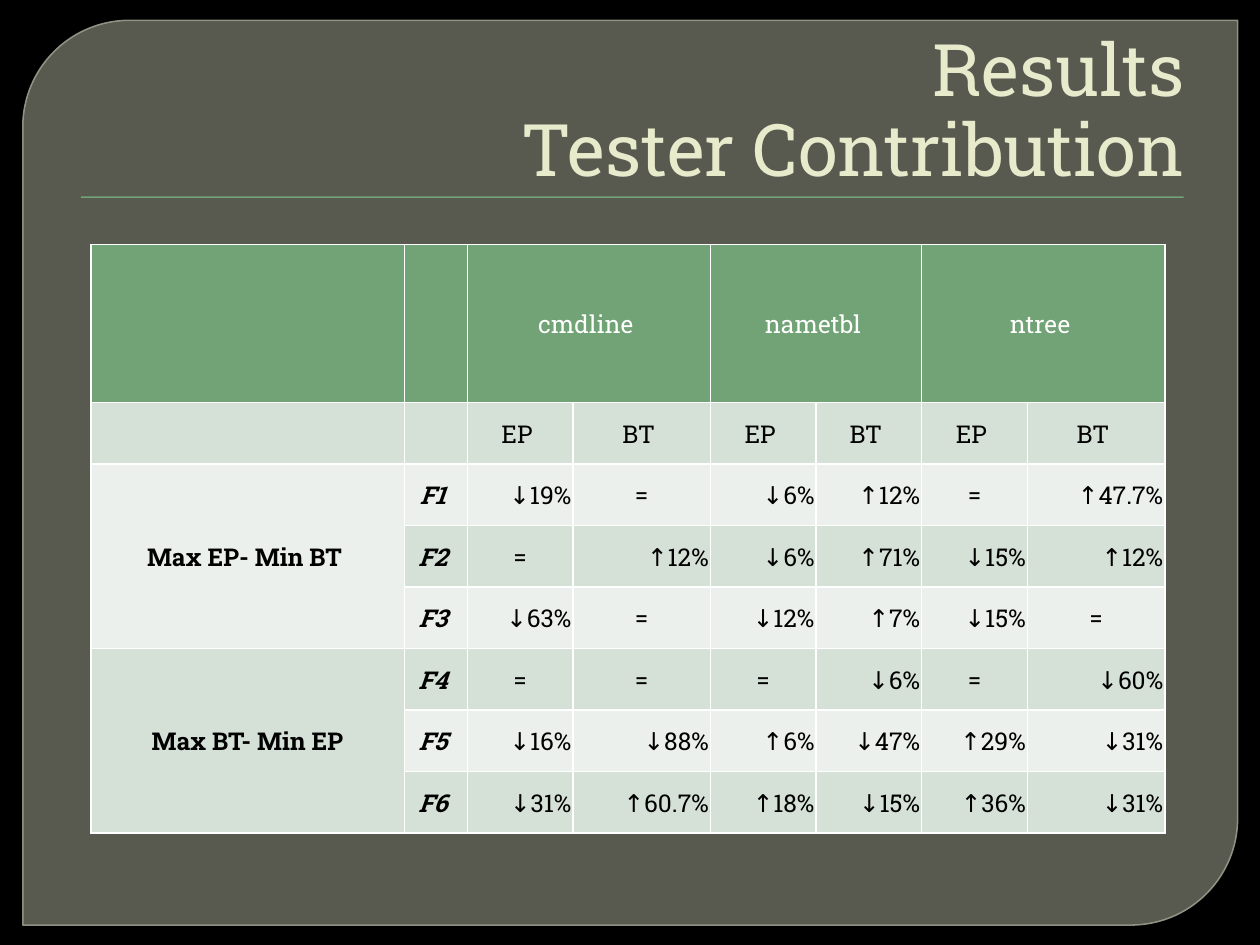
from lxml import etree
from pptx import Presentation
from pptx import util as u
from pptx.dml.color import RGBColor
from pptx.enum import shapes, text
from pptx.oxml import ns

COLORS = {
    "background": "000000", "panel": "888B7B", "panel_line": "9DA090",
    "accent": "72A376", "title": "E7EACB", "white": "FFFFFF",
    "black": "000000", "band_dark": "D5E0D6", "band_light": "EBF0EC",
}
FONT = "Roboto Slab"


def paint(fill, name, opacity=100):
    fill.solid()
    fill.fore_color.rgb = RGBColor.from_string(COLORS[name])
    if opacity < 100:
        for color in fill._xPr.iter(ns.qn("a:srgbClr")):
            etree.SubElement(color, ns.qn("a:alpha"), val=str(opacity * 1000))


def add_run(paragraph, words, size, color, bold=False, italic=False):
    run = paragraph.add_run()
    run.text = words
    run.font.name, run.font.size = FONT, u.Pt(size)
    run.font.bold, run.font.italic = bold, italic
    run.font.color.rgb = RGBColor.from_string(COLORS[color])


presentation = Presentation()
presentation.slide_width, presentation.slide_height = u.Cm(25.4), u.Cm(19.05)
slide = presentation.slides.add_slide(presentation.slide_layouts[5])
paint(slide.background.fill, "background")

# Panel and rule under the title
panel = slide.shapes.add_shape(shapes.MSO_SHAPE.ROUND_2_DIAG_RECTANGLE,
                               u.Cm(0.46), u.Cm(0.41), u.Cm(24.49), u.Cm(18.24))
panel.adjustments[0], panel.adjustments[1] = 0.118, 0
panel.shadow.inherit = False
paint(panel.fill, "panel", 65)
paint(panel.line.fill, "panel_line", 88)
panel.line.width = u.Pt(0.87)

rule = slide.shapes.add_shape(shapes.MSO_SHAPE.RECTANGLE,
                              u.Cm(1.63), u.Cm(3.96), u.Cm(22.23), u.Cm(0.03))
rule.shadow.inherit = False
paint(rule.fill, "accent")
rule.line.fill.background()

# Title, brought in front of the panel
title = slide.shapes.title
slide.shapes.element.append(title.element)
title.left, title.top = u.Cm(1.27), u.Cm(0.71)
title.width, title.height = u.Cm(22.86), u.Cm(3.18)
frame = title.text_frame
frame.auto_size = text.MSO_AUTO_SIZE.NONE
frame.word_wrap = True
frame.vertical_anchor = text.MSO_ANCHOR.BOTTOM
frame.margin_bottom = 0
paragraph = frame.paragraphs[0]
paragraph.alignment = text.PP_ALIGN.RIGHT
paragraph.line_spacing = 0.92
add_run(paragraph, "Results", 41.4, "title")
paragraph.add_line_break()
add_run(paragraph, "Tester Contribution", 41.4, "title")

# Table contents
rows = [
    ["", "", "cmdline ", "", "nametbl ", "", "ntree ", ""],
    ["", ""] + ["EP ", "BT "] * 3,
    ["Max EP- Min BT ", "F1 ", "↓19%", "=", "↓6%", "↑12%", "=", "↑47.7%"],
    ["", "F2 ", "=", "↑12%", "↓6%", "↑71%", "↓15%", "↑12%"],
    ["", "F3 ", "↓63%", "=", "↓12%", "↑7%", "↓15%", "="],
    ["Max BT- Min EP", "F4 ", "=", "=", "=", "↓6%", "=", "↓60%"],
    ["", "F5 ", "↓16%", "↓88%", "↑6%", "↓47%", "↑29%", "↓31%"],
    ["", "F6 ", "↓31%", "↑60.7%", "↑18%", "↓15%", "↑36%", "↓31%"],
]
widths = [6.32, 1.27, 2.13, 2.77, 2.13, 2.13, 2.13, 2.77]
heights = [3.18] + [1.24] * 7
table = slide.shapes.add_table(len(rows), len(widths), u.Cm(1.83), u.Cm(4.93),
                               u.Cm(sum(widths)), u.Cm(sum(heights))).table
for column, width in zip(table.columns, widths):
    column.width = u.Cm(width)
for row, height in zip(table.rows, heights):
    row.height = u.Cm(height)

# Merged program headings and strategy labels
for left in (2, 4, 6):
    table.cell(0, left).merge(table.cell(0, left + 1))
for top in (2, 5):
    table.cell(top, 0).merge(table.cell(top + 2, 0))

# Cell text, fills and borders
for row_index, row in enumerate(rows):
    header = row_index == 0
    band = "accent" if header else "band_dark" if row_index % 2 else "band_light"
    for column_index, words in enumerate(row):
        cell = table.cell(row_index, column_index)
        cell.vertical_anchor = text.MSO_ANCHOR.MIDDLE
        cell.margin_left = cell.margin_top = cell.margin_right = u.Cm(0.03)
        cell.margin_bottom = 0
        if words:
            paragraph = cell.text_frame.paragraphs[0]
            paragraph.alignment = (text.PP_ALIGN.RIGHT if "%" in words
                                   else text.PP_ALIGN.CENTER)
            add_run(paragraph, words, 14, "white" if header else "black",
                    bold=row_index > 1 and column_index < 2,
                    italic=column_index == 1)
        properties = cell._tc.get_or_add_tcPr()
        for side in ("lnL", "lnR", "lnT", "lnB"):
            border = etree.SubElement(properties, ns.qn("a:" + side),
                                      w=str(u.Pt(1)))
            solid = etree.SubElement(border, ns.qn("a:solidFill"))
            etree.SubElement(solid, ns.qn("a:srgbClr"), val=COLORS["white"])
        paint(cell.fill, band)

presentation.save("out.pptx")
